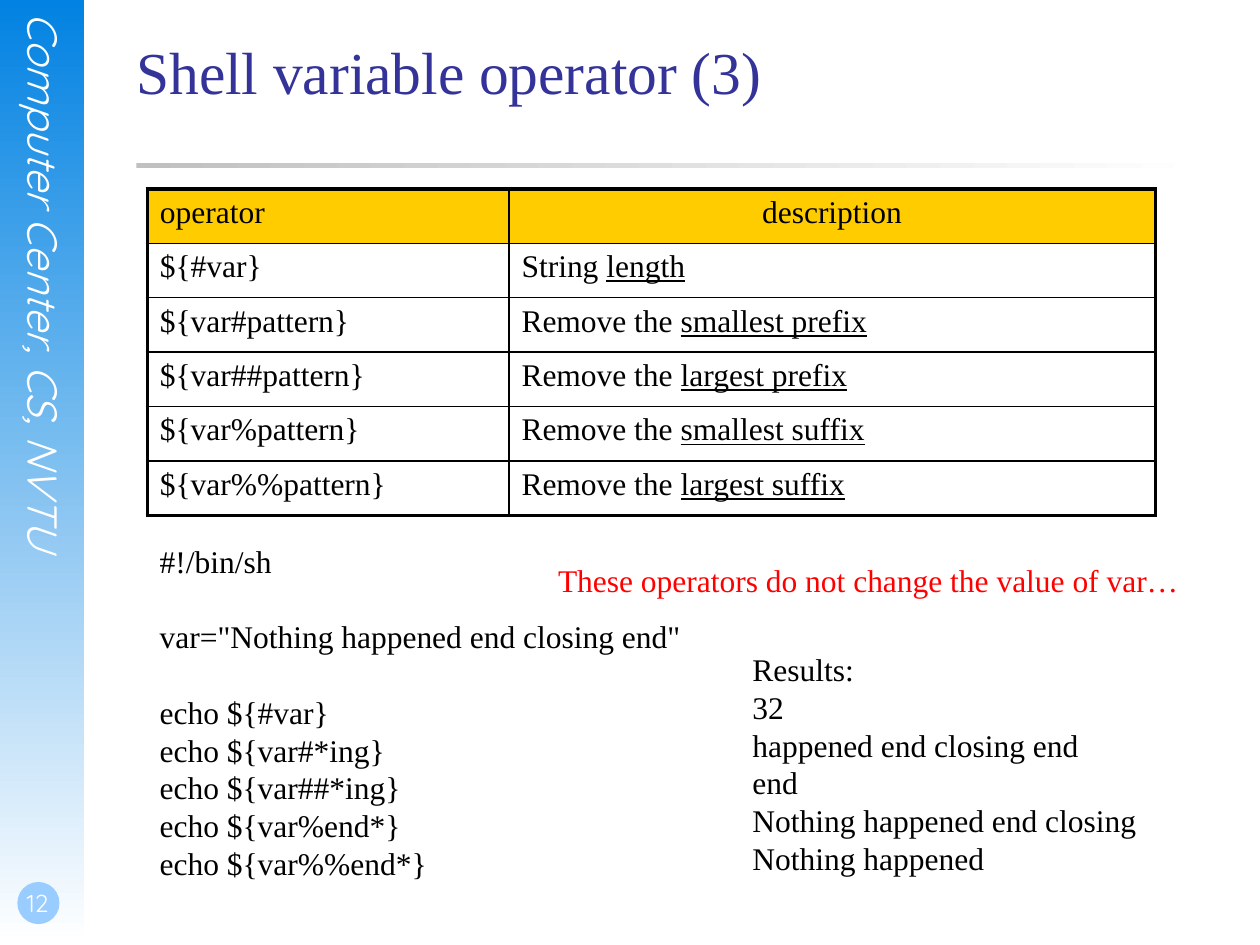
import lxml.etree
import pptx
import pptx.dml.color
import pptx.enum.shapes
import pptx.enum.text
import pptx.oxml.ns
import pptx.util

Cm = pptx.util.Cm
Pt = pptx.util.Pt
ALIGN = pptx.enum.text.PP_ALIGN
ANCHOR = pptx.enum.text.MSO_ANCHOR
AUTO_SIZE = pptx.enum.text.MSO_AUTO_SIZE
SHAPE = pptx.enum.shapes.MSO_SHAPE

COLOURS = {
    "sky": "0282E2", "white": "FFFFFF", "badge": "99CCFF", "rule": "C0C0C0",
    "title": "333399", "ink": "000000", "header": "FFCC00", "alert": "FF0000",
}
SERIF, SANS = "Times New Roman", "Quicksand"
NO_MARGINS = dict.fromkeys(("margin_left", "margin_top", "margin_right", "margin_bottom"), 0)
FREE_SIZE = {"word_wrap": False, "auto_size": AUTO_SIZE.SHAPE_TO_FIT_TEXT}
THIN, THICK = Pt(1), Pt(2.25)

OPERATORS = [
    ("${#var}", "String ", "length"),
    ("${var#pattern}", "Remove the ", "smallest prefix"),
    ("${var##pattern}", "Remove the ", "largest prefix"),
    ("${var%pattern}", "Remove the ", "smallest suffix"),
    ("${var%%pattern}", "Remove the ", "largest suffix"),
]
SCRIPT = [
    "#!/bin/sh",
    'var="Nothing happened end closing end"',
    "echo ${#var}",
    "echo ${var#*ing}",
    "echo ${var##*ing}",
    "echo ${var%end*}",
    "echo ${var%%end*}",
]
RESULTS = [
    "Results:",
    "32",
    "happened end closing end",
    "end",
    "Nothing happened end closing",
    "Nothing happened",
]


def rgb(name):
    return pptx.dml.color.RGBColor.from_string(COLOURS[name])


def assign(target, values):
    for name, value in values.items():
        setattr(target, name, value)


class SlideBuilder:
    def __init__(self, page):
        self.page = page
        self.font = {"name": SERIF, "size": Pt(18)}

    def span(self, para, text, colour="ink", **font):
        span = para.add_run()
        span.text = text
        assign(span.font, {**self.font, **font})
        span.font.color.rgb = rgb(colour)

    def title(self, text, place):
        box = self.page.shapes.title
        assign(box, dict(zip(("left", "top", "width", "height"), map(Cm, place))))
        assign(box.text_frame, {**NO_MARGINS, "vertical_anchor": ANCHOR.TOP,
                                "auto_size": AUTO_SIZE.NONE})
        para = box.text_frame.paragraphs[0]
        para.alignment = ALIGN.LEFT
        self.span(para, text, "title", size=Pt(34))

    def shape(self, kind, place, colours, angle=0):
        shape = self.page.shapes.add_shape(kind, *map(Cm, place))
        shape.shadow.inherit = False
        shape.line.fill.background()
        if len(colours) == 1:
            shape.fill.solid()
            shape.fill.fore_color.rgb = rgb(colours[0])
        else:
            shape.fill.gradient()
            shape.fill.gradient_angle = angle
            for stop, colour in zip(shape.fill.gradient_stops, colours):
                stop.color.rgb = rgb(colour)

    def text(self, lines, place, frame, colour="ink", align=ALIGN.LEFT,
             gaps=(), vertical=False, **font):
        box = self.page.shapes.add_textbox(*map(Cm, place))
        assign(box.text_frame, frame)
        if vertical:
            box.text_frame._txBody.bodyPr.set("vert", "eaVert")
        for index, line in enumerate(lines):
            para = box.text_frame.paragraphs[0] if index == 0 else box.text_frame.add_paragraph()
            para.alignment = align
            if index in gaps:
                para.space_before = Pt(21.5)
            self.span(para, line, colour, **font)

    def border(self, cell, widths):
        properties = cell._tc.get_or_add_tcPr()
        qn = pptx.oxml.ns.qn
        for side, width in zip("LRTB", widths):
            line = lxml.etree.SubElement(properties, qn(f"a:ln{side}"), w=str(width))
            fill = lxml.etree.SubElement(line, qn("a:solidFill"))
            lxml.etree.SubElement(fill, qn("a:srgbClr"), val=COLOURS["ink"])

    def table(self, rows, place, column_widths):
        last_row = len(rows) - 1
        table = self.page.shapes.add_table(len(rows), 2, *map(Cm, place)).table
        assign(table, {"first_row": False, "horz_banding": False})
        for column, width in zip(table.columns, column_widths):
            column.width = Cm(width)
        for r, (operator, plain, underlined) in enumerate(rows):
            for c in range(2):
                cell = table.cell(r, c)
                edges = (c == 0, c == 1, r == 0, r == last_row)
                self.border(cell, [THICK if edge else THIN for edge in edges])
                if r == 0:
                    cell.fill.solid()
                    cell.fill.fore_color.rgb = rgb("header")
                else:
                    cell.fill.background()
            self.span(table.cell(r, 0).text_frame.paragraphs[0], operator)
            para = table.cell(r, 1).text_frame.paragraphs[0]
            para.alignment = ALIGN.CENTER if r == 0 else ALIGN.LEFT
            self.span(para, plain)
            if underlined:
                self.span(para, underlined, underline=True)


def main():
    deck = pptx.Presentation()
    assign(deck, {"slide_width": Cm(25.4), "slide_height": Cm(19.05)})
    builder = SlideBuilder(deck.slides.add_slide(deck.slide_layouts[5]))

    builder.shape(SHAPE.RECTANGLE, (0, 0, 1.7, 19.05), ("sky", "white"), angle=270)
    builder.text(["Computer Center, CS, NVTU"], (0.38, 0.25, 1.02, 12.98), NO_MARGINS,
                 "white", vertical=True, name=SANS, size=Pt(24), italic=True)
    builder.shape(SHAPE.OVAL, (0.35, 17.78, 0.85, 0.85), ("badge",))
    builder.text(["12"], (0, 17.35, 1.47, 1.27),
                 {**NO_MARGINS, "margin_left": Cm(0.05), "margin_bottom": Cm(0.13),
                  "vertical_anchor": ANCHOR.BOTTOM, "word_wrap": True},
                 "white", ALIGN.CENTER, name=SANS, size=Pt(14))
    builder.shape(SHAPE.RECTANGLE, (2.75, 3.28, 21.6, 0.1), ("rule", "white"))
    builder.title("Shell variable operator (3)", (2.75, 0.71, 21.6, 3.18))
    builder.table([("operator", "description", "")] + OPERATORS,
                  (2.97, 3.81, 20.32, 6.58), (7.29, 13.03))
    builder.text(SCRIPT, (2.97, 10.8, 11.13, 7.2), FREE_SIZE, gaps=(1, 2))
    builder.text(RESULTS, (14.92, 12.98, 8.33, 4.88), FREE_SIZE)
    builder.text(["These operators do not change the value of var…"],
                 (11, 11.18, 13.16, 1.02), FREE_SIZE, "alert")

    deck.save("out.pptx")


if __name__ == "__main__":
    main()
